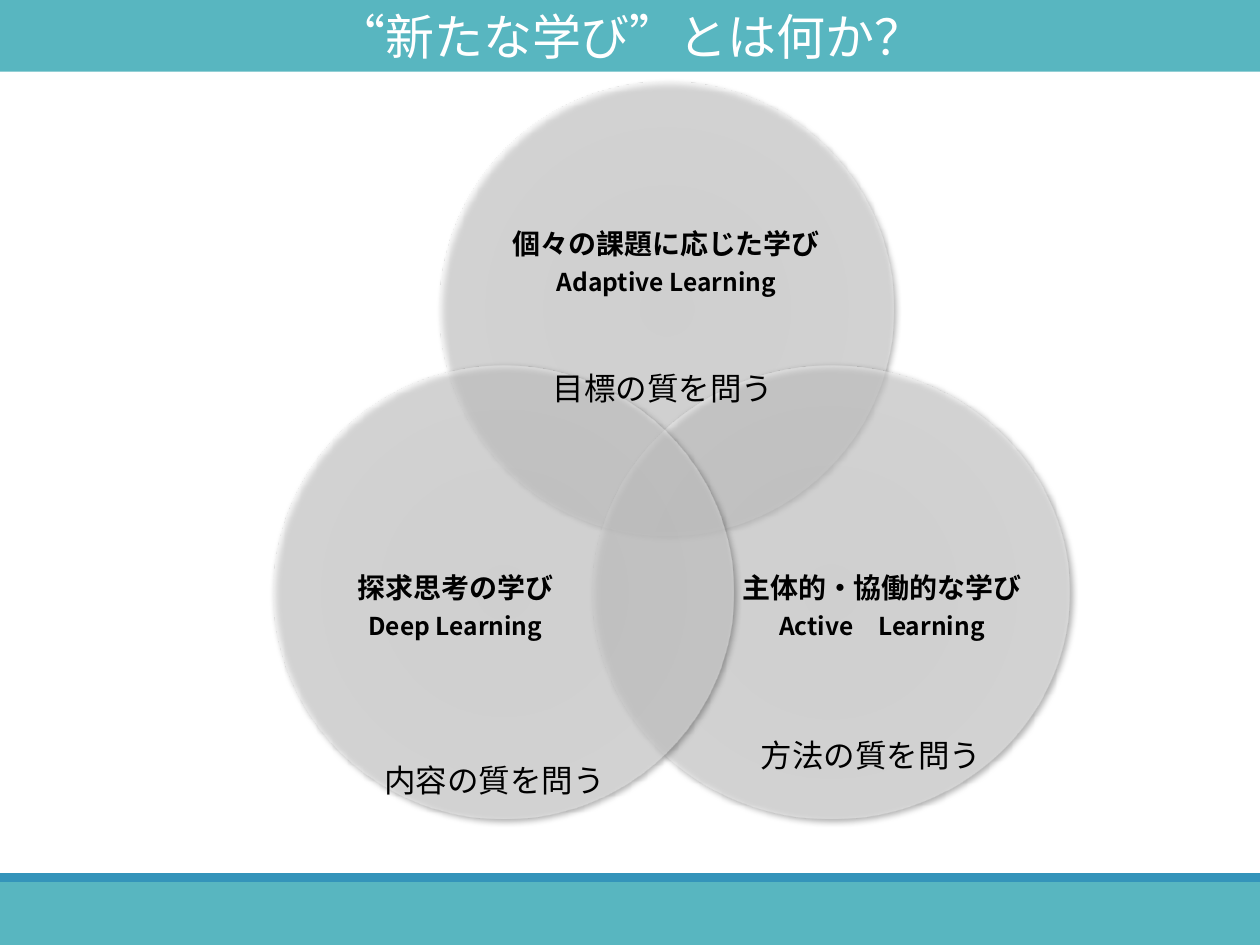
from lxml import etree
from pptx import Presentation
from pptx import oxml
from pptx.dml import color
from pptx.enum import shapes, text
from pptx.oxml import ns
from pptx.util import Pt

COLORS = {"teal": "58B6C0", "blue": "3494BA", "black": "000000", "white": "FFFFFF"}
JAPANESE = "Noto Sans CJK JP"
GLASS = [(0, "EEEEEE"), (34, "F0F0F0"), (70, "F4F4F4"), (100, "FFFFFF")]

stops = "".join(
    f'<a:gs pos="{position * 1000}"><a:srgbClr val="{shade}"><a:alpha val="50000"/></a:srgbClr></a:gs>'
    for position, shade in GLASS
)
glass_fill = (
    f'<a:gradFill {ns.nsdecls("a")} rotWithShape="1"><a:gsLst>{stops}</a:gsLst><a:path path="circle">'
    '<a:fillToRect l="100000" t="100000" r="100000" b="100000"/></a:path></a:gradFill>'
)
glass_shadow = (
    f'<a:effectLst {ns.nsdecls("a")}><a:outerShdw blurRad="{Pt(3.5)}" dist="{Pt(2)}" dir="2700000" '
    f'rotWithShape="0"><a:srgbClr val="{COLORS["black"]}"><a:alpha val="60000"/></a:srgbClr>'
    '</a:outerShdw></a:effectLst>'
)


def add_block(kind, box, fill=None):
    block = slide.shapes.add_shape(kind, *(Pt(length) for length in box))
    block.shadow.inherit = False
    block.line.fill.background()
    if fill:
        block.fill.solid()
        block.fill.fore_color.rgb = color.RGBColor.from_string(COLORS[fill])
    return block


def style(paragraph, size, ink, font=JAPANESE, bold=False):
    for run in paragraph.runs:
        run.font.size = Pt(size)
        run.font.bold = bold
        run.font.name = font
        run.font.color.rgb = color.RGBColor.from_string(COLORS[ink])
        east_asian = etree.SubElement(run.font._element, ns.qn("a:ea"))
        east_asian.set("typeface", JAPANESE)


deck = Presentation()
deck.slide_width, deck.slide_height = Pt(720), Pt(540)
slide = deck.slides.add_slide(deck.slide_layouts[6])

add_block(shapes.MSO_SHAPE.RECTANGLE, (0, 504, 720, 36), "teal")
add_block(shapes.MSO_SHAPE.RECTANGLE, (0, 499, 720, 5), "blue")

learnings = [
    ((251.3, 46.8, 259.2, 259.2), (285.8, 92.2, 190.1, 116.6), "個々の課題に応じた学び", "Adaptive Learning"),
    ((338.4, 208.8, 272.9, 259.2), (421.9, 275.8, 164.2, 142.6), "主体的・協働的な学び", "Active　Learning"),
    ((156.2, 208.8, 262.8, 259.2), (181.4, 275.8, 157.7, 142.6), "探求思考の学び", "Deep Learning"),
]
for circle_box, label_box, japanese, english in learnings:
    circle = add_block(shapes.MSO_SHAPE.OVAL, circle_box)
    properties = circle._element.spPr
    properties.remove(properties.find(ns.qn("a:effectLst")))
    properties.find(ns.qn("a:prstGeom")).addnext(oxml.parse_xml(glass_fill))
    properties.find(ns.qn("a:ln")).addnext(oxml.parse_xml(glass_shadow))

    label = slide.shapes.add_textbox(*(Pt(length) for length in label_box)).text_frame
    label.word_wrap = True
    label.vertical_anchor = text.MSO_ANCHOR.MIDDLE
    label.margin_left = label.margin_right = label.margin_top = label.margin_bottom = 0
    label.text = f"{japanese}\n{english}"
    for paragraph, size in zip(label.paragraphs, (16, 14)):
        paragraph.alignment = text.PP_ALIGN.CENTER
        paragraph.line_spacing = 0.9
        paragraph.space_after = Pt(size * 0.35)
        style(paragraph, size, "black", bold=True)

questions = [(308.9, 207.4, "目標の質を問う"), (212.4, 431.3, "内容の質を問う"), (427.7, 416.9, "方法の質を問う")]
for left, top, wording in questions:
    question = slide.shapes.add_textbox(Pt(left), Pt(top), Pt(154.8), Pt(28.8)).text_frame
    question.word_wrap = True
    question.text = wording
    style(question.paragraphs[0], 18, "black", font="Calibri")

title = add_block(shapes.MSO_SHAPE.RECTANGLE, (0, 0, 720, 41), "teal").text_frame
title.word_wrap = True
title.vertical_anchor = text.MSO_ANCHOR.TOP
title.text = "“新たな学び”とは何か？"
title.paragraphs[0].alignment = text.PP_ALIGN.CENTER
style(title.paragraphs[0], 28, "white")

deck.save("out.pptx")
